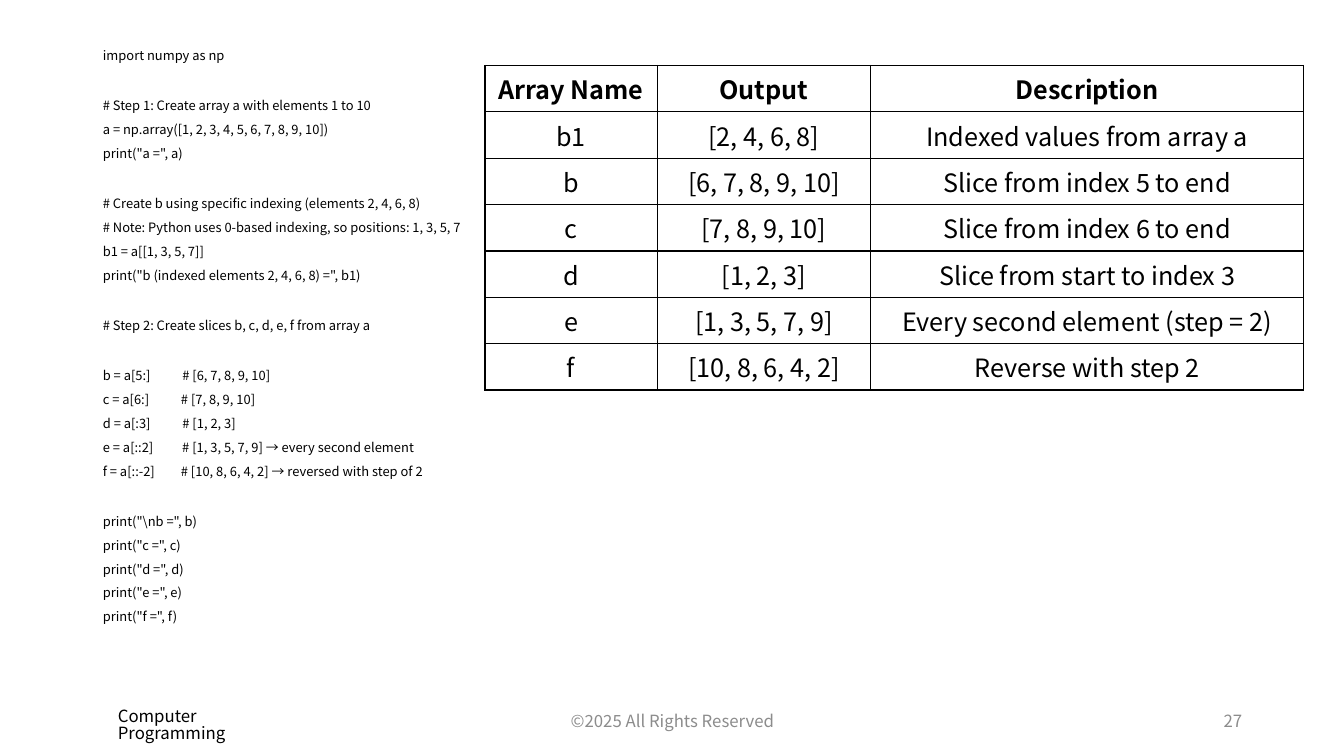
from lxml.etree import SubElement
from pptx import Presentation
from pptx.dml.color import RGBColor
from pptx.enum.text import MSO_ANCHOR, MSO_AUTO_SIZE, PP_ALIGN
from pptx.oxml.ns import qn
from pptx.util import Emu, Pt

FONT = "Noto Sans CJK KR"
BLACK, GRAY = "000000", "8C8C8C"
CODE_SIZE, CODE_GAP, CODE_PITCH = 9.2, 8.2, 18.86
CODE = r'''import numpy as np

# Step 1: Create array a with elements 1 to 10
a = np.array([1, 2, 3, 4, 5, 6, 7, 8, 9, 10])
print("a =", a)

# Create b using specific indexing (elements 2, 4, 6, 8)
# Note: Python uses 0-based indexing, so positions: 1, 3, 5, 7
b1 = a[[1, 3, 5, 7]]
print("b (indexed elements 2, 4, 6, 8) =", b1)

# Step 2: Create slices b, c, d, e, f from array a

b = a[5:]           # [6, 7, 8, 9, 10]
c = a[6:]           # [7, 8, 9, 10]
d = a[:3]           # [1, 2, 3]
e = a[::2]          # [1, 3, 5, 7, 9] → every second element
f = a[::-2]         # [10, 8, 6, 4, 2] → reversed with step of 2

print("\nb =", b)
print("c =", c)
print("d =", d)
print("e =", e)
print("f =", f)'''
ARRAYS = [
    ("Array Name", "Output", "Description"),
    ("b1", "[2, 4, 6, 8]", "Indexed values from array a"),
    ("b", "[6, 7, 8, 9, 10]", "Slice from index 5 to end"),
    ("c", "[7, 8, 9, 10]", "Slice from index 6 to end"),
    ("d", "[1, 2, 3]", "Slice from start to index 3"),
    ("e", "[1, 3, 5, 7, 9]", "Every second element (step = 2)"),
    ("f", "[10, 8, 6, 4, 2]", "Reverse with step 2"),
]
COLUMN_SHARES = (171, 212, 430)


def px(length):
    """Turn px into EMU at 100 px to the inch."""
    return Emu(round(length * 9144))


def color(value):
    """Turn a hex string into a colour."""
    return RGBColor.from_string(value)


def add_run(paragraph, text, size, fill=BLACK, bold=False):
    """Add one formatted run to a paragraph."""
    run = paragraph.add_run()
    run.text = text
    run.font.name = FONT
    run.font.size = Pt(size)
    run.font.bold = bold
    run.font.color.rgb = color(fill)


def place(shape, box):
    """Move a shape into a px box."""
    shape.left, shape.top, shape.width, shape.height = map(px, box)


def add_code(slide, box):
    """Fill the body placeholder with the code listing."""
    body = slide.placeholders[1]
    place(body, box)
    frame = body.text_frame
    frame.word_wrap = True
    frame.auto_size = MSO_AUTO_SIZE.NONE
    paragraph, gap = frame.paragraphs[0], 0
    for line in CODE.splitlines():
        if not line:
            gap += CODE_PITCH
            continue
        if paragraph.runs:
            paragraph = frame.add_paragraph()
        paragraph.line_spacing = 0.8
        paragraph.space_before = Pt(gap)
        properties = paragraph._p.get_or_add_pPr()
        properties.set("marL", "0")
        properties.set("indent", "0")
        SubElement(properties, qn("a:buNone"))
        add_run(paragraph, line, CODE_SIZE)
        gap = CODE_GAP


def add_borders(cell):
    """Draw a thin black line on each side of a cell."""
    properties = cell._tc.get_or_add_tcPr()
    for position, side in enumerate(("a:lnL", "a:lnR", "a:lnT", "a:lnB")):
        line = properties.makeelement(qn(side), {"w": str(Pt(1))})
        properties.insert(position, line)
        fill = SubElement(line, qn("a:solidFill"))
        SubElement(fill, qn("a:srgbClr"), val=BLACK)


def add_array_table(slide, box):
    """Add the table of arrays, its columns shared out over the box."""
    left, top, width, height = box
    frame = slide.shapes.add_table(
        len(ARRAYS), len(COLUMN_SHARES), *map(px, box))
    table = frame.table
    table.horz_banding = False
    for column, share in zip(table.columns, COLUMN_SHARES):
        column.width = px(width * share / sum(COLUMN_SHARES))
    for row_index, values in enumerate(ARRAYS):
        table.rows[row_index].height = px(height / len(ARRAYS))
        for column_index, value in enumerate(values):
            cell = table.cell(row_index, column_index)
            cell.fill.background()
            cell.vertical_anchor = MSO_ANCHOR.MIDDLE
            add_borders(cell)
            paragraph = cell.text_frame.paragraphs[0]
            paragraph.alignment = PP_ALIGN.CENTER
            add_run(paragraph, value, 18, bold=row_index == 0)


def add_label(slide, box, text, fill, alignment, anchor):
    """Add a small footer text and return its text frame."""
    frame = slide.shapes.add_textbox(*map(px, box)).text_frame
    frame.word_wrap = True
    frame.vertical_anchor = anchor
    frame.paragraphs[0].alignment = alignment
    add_run(frame.paragraphs[0], text, 12, fill)
    return frame


def add_footer(slide, box):
    """Add course name, copyright line and slide number along the box."""
    left, top, width, height = box
    course = add_label(slide, (left, top + 4, 208, 30), "Computer Programming",
                       BLACK, PP_ALIGN.LEFT, MSO_ANCHOR.TOP)
    course.margin_right = px(30)
    course.paragraphs[0].line_spacing = 0.82
    add_label(slide, (left + 335, top, 450, height),
              "©2025 All Rights Reserved",
              GRAY, PP_ALIGN.CENTER, MSO_ANCHOR.MIDDLE)
    add_label(slide, (left + width - 300, top, 300, height), "27",
              GRAY, PP_ALIGN.RIGHT, MSO_ANCHOR.MIDDLE)


def main():
    """Build the slide and save it."""
    presentation = Presentation()
    presentation.slide_width, presentation.slide_height = px(1333), px(750)
    slide = presentation.slides.add_slide(presentation.slide_layouts[1])
    title = slide.shapes.title.element
    title.getparent().remove(title)
    add_code(slide, (92, 45, 444, 630))
    add_footer(slide, (107, 695, 1135, 40))
    add_array_table(slide, (481, 65, 812, 322))
    presentation.save("out.pptx")


if __name__ == "__main__":
    main()
